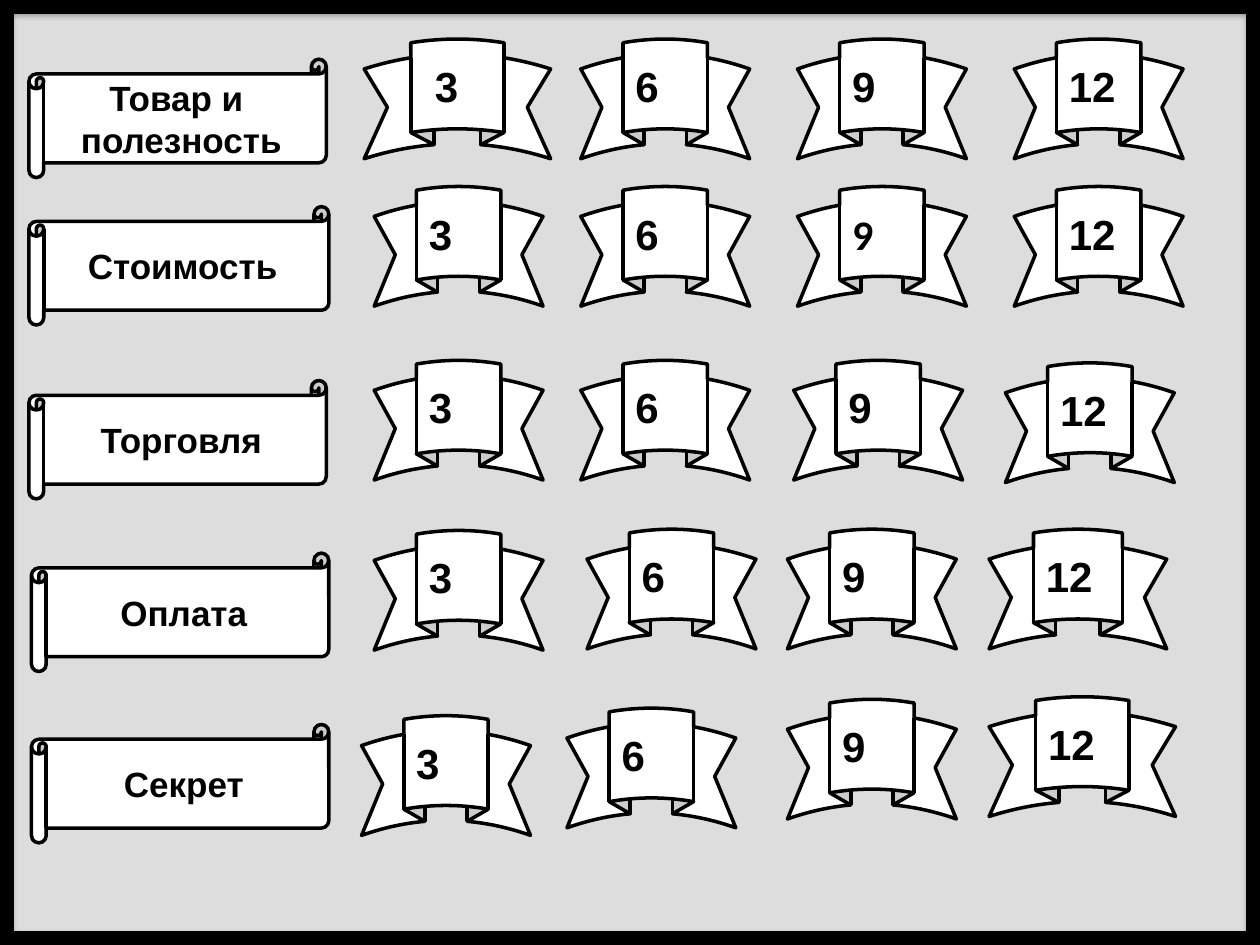
from dataclasses import dataclass

from lxml import etree
from pptx import Presentation
from pptx.dml.color import RGBColor
from pptx.enum.shapes import MSO_SHAPE as SHAPE
from pptx.enum.text import MSO_ANCHOR as ANCHOR, PP_ALIGN as ALIGN
from pptx.oxml import parse_xml
from pptx.util import Inches, Pt


@dataclass(frozen=True)
class Theme:
    back: RGBColor = RGBColor(0xDD, 0xDD, 0xDD)
    paper: RGBColor = RGBColor(0xFF, 0xFF, 0xFF)
    ink: RGBColor = RGBColor(0, 0, 0)
    font: str = "Arial"
    topic: int = 20
    score: int = 24
    line: int = 2


theme = Theme()


def write(sp, text, size=theme.score, font=theme.font, align=ALIGN.LEFT):
    """Put bold text, one paragraph a line, in the middle of a shape."""
    tf = sp.text_frame
    tf.word_wrap = True
    tf.vertical_anchor = ANCHOR.MIDDLE
    for i, line in enumerate(text.split("\n")):
        p = tf.paragraphs[0] if i == 0 else tf.add_paragraph()
        p.alignment = align
        r = p.add_run()
        r.text = line
        r.font.size, r.font.name, r.font.bold = Pt(size), font, True
        r.font.color.rgb = theme.ink


def add_banner(kind, x, y, w, h):
    """Add a white shape with a black outline."""
    sp = s.shapes.add_shape(kind, Inches(x), Inches(y), Inches(w), Inches(h))
    sp.shadow.inherit = False
    sp.fill.solid()
    sp.fill.fore_color.rgb = theme.paper
    sp.line.color.rgb = theme.ink
    sp.line.width = Pt(theme.line)
    return sp


prs = Presentation()
prs.slide_width, prs.slide_height = Inches(10), Inches(7.5)
s = prs.slides.add_slide(prs.slide_layouts[6])
s.background.fill.solid()
s.background.fill.fore_color.rgb = theme.back

# Question board: topic, its scroll (x, y, w), its ribbons (x, y, w)
SCORES = ("3", "6", "9", "12")
BOARD = [
    ("Товар и \nполезность", (0.23, 0.47, 2.36),
     [(2.89, 0.31, 1.48), (4.61, 0.31, 1.34), (6.33, 0.31, 1.34), (8.05, 0.31, 1.34)]),
    ("Стоимость", (0.23, 1.64, 2.38),
     [(2.97, 1.48, 1.34), (4.61, 1.48, 1.34), (6.33, 1.48, 1.34), (8.05, 1.48, 1.34)]),
    ("Торговля", (0.23, 3.02, 2.36),
     [(2.97, 2.86, 1.34), (4.61, 2.86, 1.34), (6.3, 2.86, 1.34), (7.98, 2.88, 1.34)]),
    ("Оплата", (0.25, 4.39, 2.36),
     [(2.97, 4.21, 1.34), (4.66, 4.2, 1.34), (6.25, 4.2, 1.34), (7.85, 4.2, 1.41)]),
    ("Секрет", (0.25, 5.75, 2.36),
     [(2.87, 5.68, 1.34), (4.5, 5.62, 1.34), (6.25, 5.55, 1.34), (7.85, 5.53, 1.48)]),
]
for row, (topic, scroll, ribbons) in enumerate(BOARD):
    sp = add_banner(SHAPE.HORIZONTAL_SCROLL, *scroll, 0.94)
    write(sp, topic, size=theme.topic, align=ALIGN.CENTER)
    for score, ribbon in zip(SCORES, ribbons):
        sp = add_banner(SHAPE.CURVED_UP_RIBBON, *ribbon, 0.95)
        # The first ribbon is indented by a space; one 9 has its own font
        text = " 3" if (row, score) == (0, "3") else score
        font = "Calibri" if (row, score) == (1, "9") else theme.font
        write(sp, text, font=font)

# Black frame around the slide
edge = 0.11
outlines = [
    [(x, y) for x, y in ((a, a), (a, 7.5 - a), (10 - a, 7.5 - a), (10 - a, a))]
    for a in (0, edge)
]
outer, inner = [[(Inches(x), Inches(y)) for x, y in o] for o in outlines]
fb = s.shapes.build_freeform(*outer[0])
fb.add_line_segments(outer[1:], close=True)
fb.move_to(*inner[0])
fb.add_line_segments(inner[1:], close=True)
frame = fb.convert_to_shape()
frame.fill.solid()
frame.fill.fore_color.rgb = theme.ink
frame.line.fill.background()

# Soft shadow below the frame
frame.shadow.inherit = False
effects = frame.element.spPr.find("{*}effectLst")
shadow = parse_xml(
    '<a:outerShdw xmlns:a="http://schemas.openxmlformats.org/drawingml/2006/main"'
    f' blurRad="{Pt(3.1)}" dist="{Pt(1.8)}" dir="5400000" rotWithShape="0">'
    f'<a:srgbClr val="{theme.ink}"><a:alpha val="35000"/></a:srgbClr></a:outerShdw>'
)
effects.append(shadow)
etree.cleanup_namespaces(effects)

prs.save("out.pptx")
